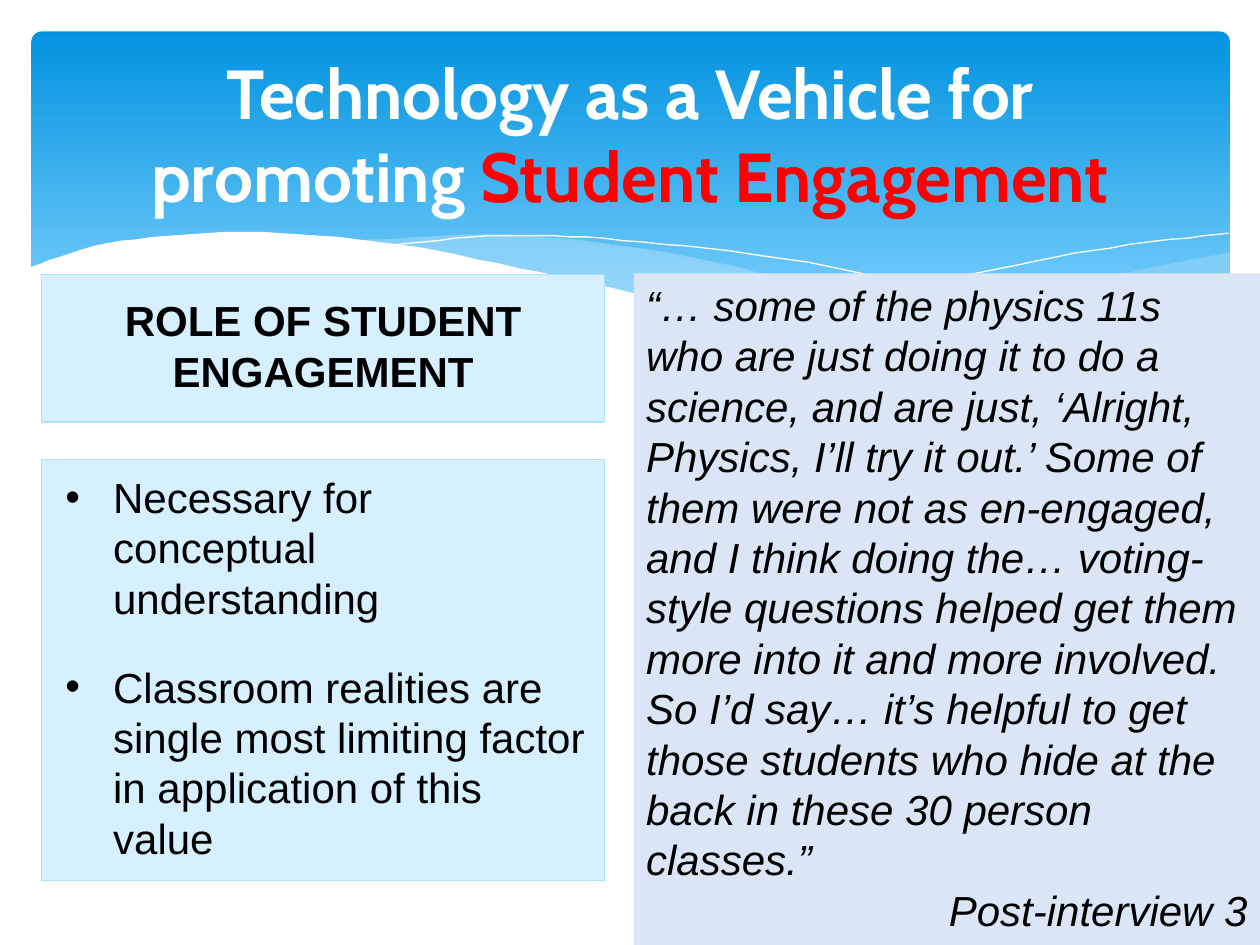
from lxml import etree
from pptx import Presentation
from pptx.dml.color import RGBColor
from pptx.enum.shapes import MSO_SHAPE
from pptx.enum.text import MSO_ANCHOR, PP_ALIGN
from pptx.oxml.ns import qn
from pptx.util import Pt

PX = 9144  # 100 px to the inch
RECT, ROUND_RECT = MSO_SHAPE.RECTANGLE, MSO_SHAPE.ROUNDED_RECTANGLE
TOP, MIDDLE = MSO_ANCHOR.TOP, MSO_ANCHOR.MIDDLE
LEFT, CENTER, RIGHT = PP_ALIGN.LEFT, PP_ALIGN.CENTER, PP_ALIGN.RIGHT


class Theme:
    sky_top = RGBColor.from_string("0293E0")
    sky_bottom = RGBColor.from_string("83D3FE")
    wave = RGBColor.from_string("C6E7FC")
    panel = RGBColor.from_string("D6F0FF")
    panel_line = RGBColor.from_string("ADE2FE")
    quote = RGBColor.from_string("DAE6F6")
    white = RGBColor.from_string("FFFFFF")
    black = RGBColor.from_string("000000")
    red = RGBColor.from_string("FF0000")
    title_font, body_font = "Cabin", "Arial"
    title_size, body_size, body_leading = Pt(39.6), Pt(24), Pt(28.8)
    bullet_gap = Pt(22)


def add_panel(box, fill, line=None, shape=RECT):
    sp = s.shapes.add_shape(shape, *(v * PX for v in box))
    sp.shadow.inherit = False
    sp.fill.solid()
    sp.fill.fore_color.rgb = fill
    if line is None:
        sp.line.fill.background()
    else:
        sp.line.color.rgb = line
        sp.line.width = Pt(0.75)
    return sp


def write_body(tf, texts, align=LEFT, anchor=TOP, bold=False, italic=False):
    """Fill a text frame with one body-styled paragraph per text."""
    tf.word_wrap = True
    tf.vertical_anchor = anchor
    tf.text = "\n".join(texts)
    for p in tf.paragraphs:
        p.alignment = align
        p.line_spacing = Theme.body_leading
        f = p.runs[0].font
        f.name, f.size, f.color.rgb = Theme.body_font, Theme.body_size, Theme.black
        f.bold, f.italic = bold, italic


prs = Presentation()
prs.slide_width, prs.slide_height = 1000 * PX, 750 * PX
s = prs.slides.add_slide(prs.slide_layouts[6])

# Blue header
header = add_panel((25, 25, 951, 270), Theme.sky_top, shape=ROUND_RECT)
header.adjustments[0] = 0.03
header.fill.gradient()
header.fill.gradient_angle = 270
start, end = header.fill.gradient_stops
start.position, start.color.rgb = 0, Theme.sky_top
end.position, end.color.rgb = 0.9, Theme.sky_bottom

# Waves, back to front: knots of each edge, fill (none: white hairline), opacity in percent
waves = [
    ([[(976, 200), (861, 223), (753, 248), (661, 265)],
      [(661, 265), (781, 277), (872, 274), (976, 247)]], Theme.wave, 29),
    ([[(893, 273), (741, 247), (629, 222), (514, 198), (399, 186), (286, 191)],
      [(286, 191), (449, 222), (601, 255), (748, 276), (893, 273)]], Theme.wave, 40),
    ([[(309, 195), (401, 187), (510, 192), (665, 213), (907, 272)]], None, 100),
    ([[(613, 257), (748, 223), (866, 199), (975, 185)]], None, 100),
    ([[(977, 246), (875, 273), (761, 275), (603, 254), (447, 220),
       (316, 194), (193, 184), (85, 193), (23, 213)],
      [(23, 329), (977, 329)]], Theme.white, 100),
]
STEPS = 8
for edges, fill, opacity in waves:
    points = []
    for knots in edges:
        # Catmull-Rom spline through the knots
        padded = [knots[0], *knots, knots[-1]]
        for a, b, c, d in zip(padded, padded[1:], padded[2:], padded[3:]):
            for i in range(STEPS):
                t = i / STEPS
                points.append(tuple(
                    q + t * (r - p + t * (2 * p - 5 * q + 4 * r - u
                                          + t * (3 * q - p - 3 * r + u))) / 2
                    for p, q, r, u in zip(a, b, c, d)))
        points.append(knots[-1])
    fb = s.shapes.build_freeform(*points[0], scale=PX)
    fb.add_line_segments(points[1:], close=fill is not None)
    sp = fb.convert_to_shape()
    sp.shadow.inherit = False
    if fill is None:
        sp.fill.background()
        sp.line.color.rgb = Theme.white
        sp.line.width = Pt(0)
        continue
    sp.line.fill.background()
    sp.fill.solid()
    sp.fill.fore_color.rgb = fill
    if opacity < 100:
        clr = sp._element.spPr.find(qn("a:solidFill"))[0]
        etree.SubElement(clr, qn("a:alpha"), val=str(opacity * 1000))

# Bulleted panel
add_panel((33, 365, 447, 334), Theme.panel, Theme.panel_line)
bullets = s.shapes.add_textbox(42 * PX, 363 * PX, 433 * PX, 333 * PX).text_frame
write_body(bullets, [
    "Necessary for conceptual understanding",
    "Classroom realities are single most limiting factor in application of this value",
], anchor=MIDDLE)
bullets.paragraphs[1].space_before = Theme.bullet_gap
for p in bullets.paragraphs:
    pPr = p._p.get_or_add_pPr()
    pPr.set("marL", str(38 * PX))
    pPr.set("indent", str(-38 * PX))
    etree.SubElement(pPr, qn("a:buFont"), typeface=Theme.body_font)
    etree.SubElement(pPr, qn("a:buChar"), char="•")

# Quotation
quote = add_panel((503, 217, 497, 533), Theme.quote).text_frame
write_body(quote, [
    "“… some of the physics 11s who are just doing it to do a science, and are just, "
    "‘Alright, Physics, I’ll try it out.’ Some of them were not as en-engaged, and I "
    "think doing the… voting-style questions helped get them more into it and more "
    "involved. So I’d say… it’s helpful to get those students who hide at the back in "
    "these 30 person classes.”",
    "Post-interview 3",
], italic=True)
quote.paragraphs[1].alignment = RIGHT

# Role panel
add_panel((33, 218, 447, 117), Theme.panel, Theme.panel_line)
role = s.shapes.add_textbox(33 * PX, 229 * PX, 447 * PX, 131 * PX).text_frame
write_body(role, ["ROLE OF STUDENT ENGAGEMENT"], align=CENTER, bold=True)

# Title
tf = s.shapes.add_textbox(50 * PX, 37 * PX, 900 * PX, 137 * PX).text_frame
tf.word_wrap = True
tf.vertical_anchor = MIDDLE
p = tf.paragraphs[0]
p.alignment = CENTER
for text, color in [("Technology as a Vehicle for promoting ", Theme.white),
                    ("Student Engagement", Theme.red)]:
    r = p.add_run()
    r.text = text
    r.font.name, r.font.size, r.font.bold = Theme.title_font, Theme.title_size, True
    r.font.color.rgb = color

prs.save("out.pptx")
